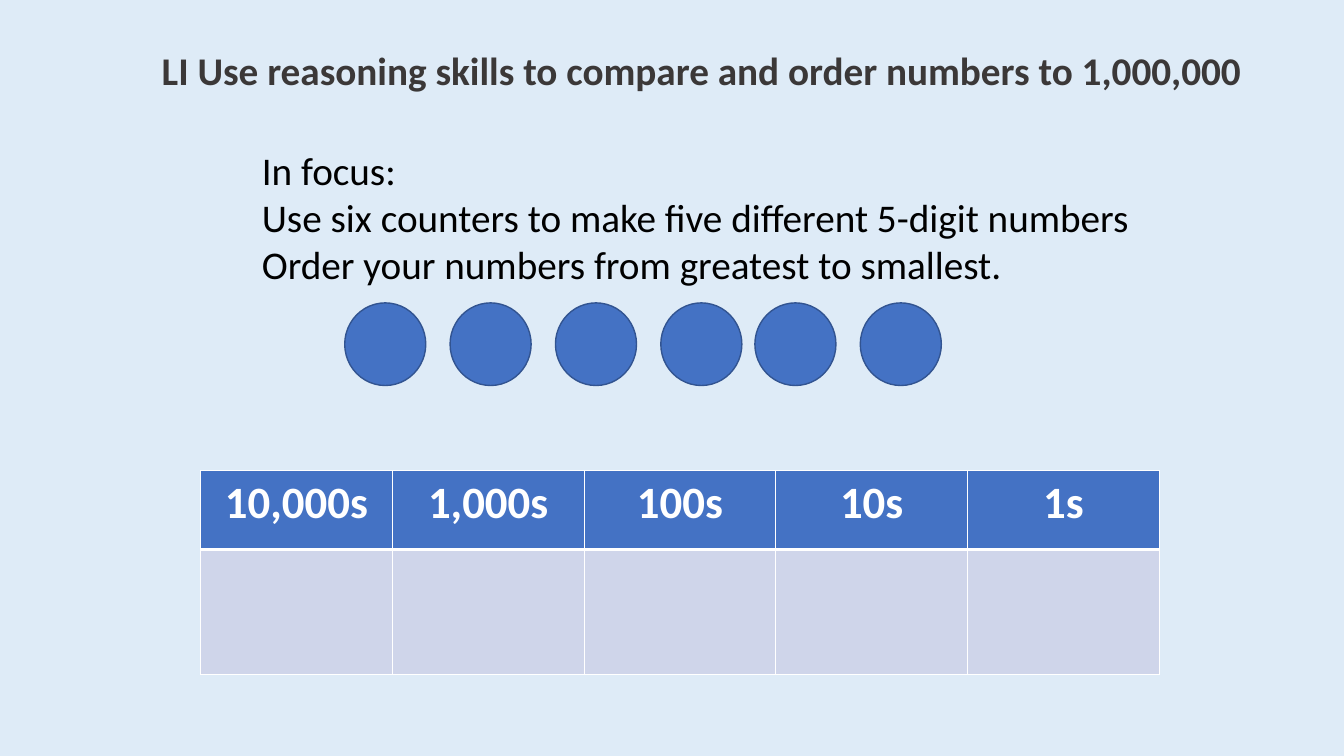
"""Build a place-value slide with six counters; lengths are percentages of the slide."""
from dataclasses import dataclass

from lxml import etree
from pptx import Presentation
from pptx import util as u
from pptx.dml.color import RGBColor
from pptx.enum import shapes, text
from pptx.oxml import ns

SLIDE_WIDTH, SLIDE_HEIGHT = u.Inches(13.33), u.Inches(7.5)
BACKGROUND, BLUE, BLUE_EDGE, PALE_BLUE = "DEEBF7", "4472C4", "325491", "CFD5EA"
WHITE, BLACK, CHARCOAL = "FFFFFF", "000000", "3B3838"
PLACE_VALUES = ["10,000s", "1,000s", "100s", "10s", "1s"]
COUNTER_PITCH = 7.84
HEADER_HEIGHT, BODY_HEIGHT = 10.4, 16.53


@dataclass(frozen=True)
class Area:
    """A rectangle in percentages of the slide's width and height."""

    left: float
    top: float
    width: float
    height: float

    def box(self) -> tuple[int, int, int, int]:
        """Return the rectangle in slide units."""
        return (across(self.left), down(self.top), across(self.width), down(self.height))


@dataclass(frozen=True)
class CounterGroup:
    """A run of evenly spaced counters."""

    left: float
    count: int


COUNTER_GROUPS = [CounterGroup(25.65, 4), CounterGroup(56.17, 2)]


def across(percent: float) -> int:
    """Turn a share of the slide's width into slide units."""
    return round(SLIDE_WIDTH * percent / 100)


def down(percent: float) -> int:
    """Turn a share of the slide's height into slide units."""
    return round(SLIDE_HEIGHT * percent / 100)


def paint(fill, color: str) -> None:
    """Give a fill one solid colour."""
    fill.solid()
    fill.fore_color.rgb = RGBColor.from_string(color)


def write(frame, content: str, *, size: float = 28, color: str = BLACK,
          bold: bool = False, align=text.PP_ALIGN.LEFT) -> None:
    """Write each line of the content as a formatted paragraph."""
    for index, line in enumerate(content.split("\n")):
        paragraph = frame.add_paragraph() if index else frame.paragraphs[0]
        paragraph.alignment = align
        run = paragraph.add_run()
        run.text = line
        run.font.name = "Calibri"
        run.font.size = u.Pt(size)
        run.font.bold = bold
        run.font.color.rgb = RGBColor.from_string(color)


def add_text(slide, area: Area, content: str, *, wrap: bool = True, **style) -> None:
    """Add a text box that grows with its text."""
    frame = slide.shapes.add_textbox(*area.box()).text_frame
    frame.word_wrap = wrap
    frame.auto_size = text.MSO_AUTO_SIZE.SHAPE_TO_FIT_TEXT
    write(frame, content, **style)


def add_counter(slide, area: Area) -> None:
    """Add one round counter."""
    shape = slide.shapes.add_shape(shapes.MSO_SHAPE.OVAL, *area.box())
    shape.shadow.inherit = False
    paint(shape.fill, BLUE)
    paint(shape.line.fill, BLUE_EDGE)
    shape.line.width = u.Pt(1)


def style_cell(cell, fill: str, top: float, bottom: float) -> None:
    """Fill a cell and draw its white borders."""
    properties = cell._tc.get_or_add_tcPr()
    for side, width in {"L": 1, "R": 1, "T": top, "B": bottom}.items():
        border = etree.SubElement(properties, ns.qn(f"a:ln{side}"), w=str(u.Pt(width)))
        solid = etree.SubElement(border, ns.qn("a:solidFill"))
        etree.SubElement(solid, ns.qn("a:srgbClr"), val=WHITE)
    paint(cell.fill, fill)


def add_place_value_table(slide, area: Area) -> None:
    """Add the place-value headings above a row of empty cells."""
    table = slide.shapes.add_table(2, len(PLACE_VALUES), *area.box()).table
    table.rows[0].height = down(HEADER_HEIGHT)
    table.rows[1].height = down(BODY_HEIGHT)
    for column, heading in enumerate(PLACE_VALUES):
        header, body = table.cell(0, column), table.cell(1, column)
        write(header.text_frame, heading, size=32, color=WHITE, bold=True,
              align=text.PP_ALIGN.CENTER)
        style_cell(header, BLUE, top=1, bottom=3)
        style_cell(body, PALE_BLUE, top=3, bottom=1)


def main() -> None:
    """Build and save the slide."""
    presentation = Presentation()
    presentation.slide_width, presentation.slide_height = SLIDE_WIDTH, SLIDE_HEIGHT
    slide = presentation.slides.add_slide(presentation.slide_layouts[6])
    paint(slide.background.fill, BACKGROUND)
    add_text(slide, Area(18.75, 18.67, 66.75, 20.13),
             "In focus:\n"
             "Use six counters to make five different 5-digit numbers\n"
             "Order your numbers from greatest to smallest.", wrap=False)
    add_place_value_table(slide, Area(14.93, 62.27, 71.34, HEADER_HEIGHT + BODY_HEIGHT))
    for group in COUNTER_GROUPS:
        for index in range(group.count):
            add_counter(slide, Area(group.left + index * COUNTER_PITCH, 40.07, 6.03, 10.93))
    add_text(slide, Area(9.45, 5.47, 85.45, 7.6),
             "LI Use reasoning skills to compare and order numbers to 1,000,000",
             color=CHARCOAL, bold=True, align=text.PP_ALIGN.CENTER)
    presentation.save("out.pptx")


if __name__ == "__main__":
    main()
